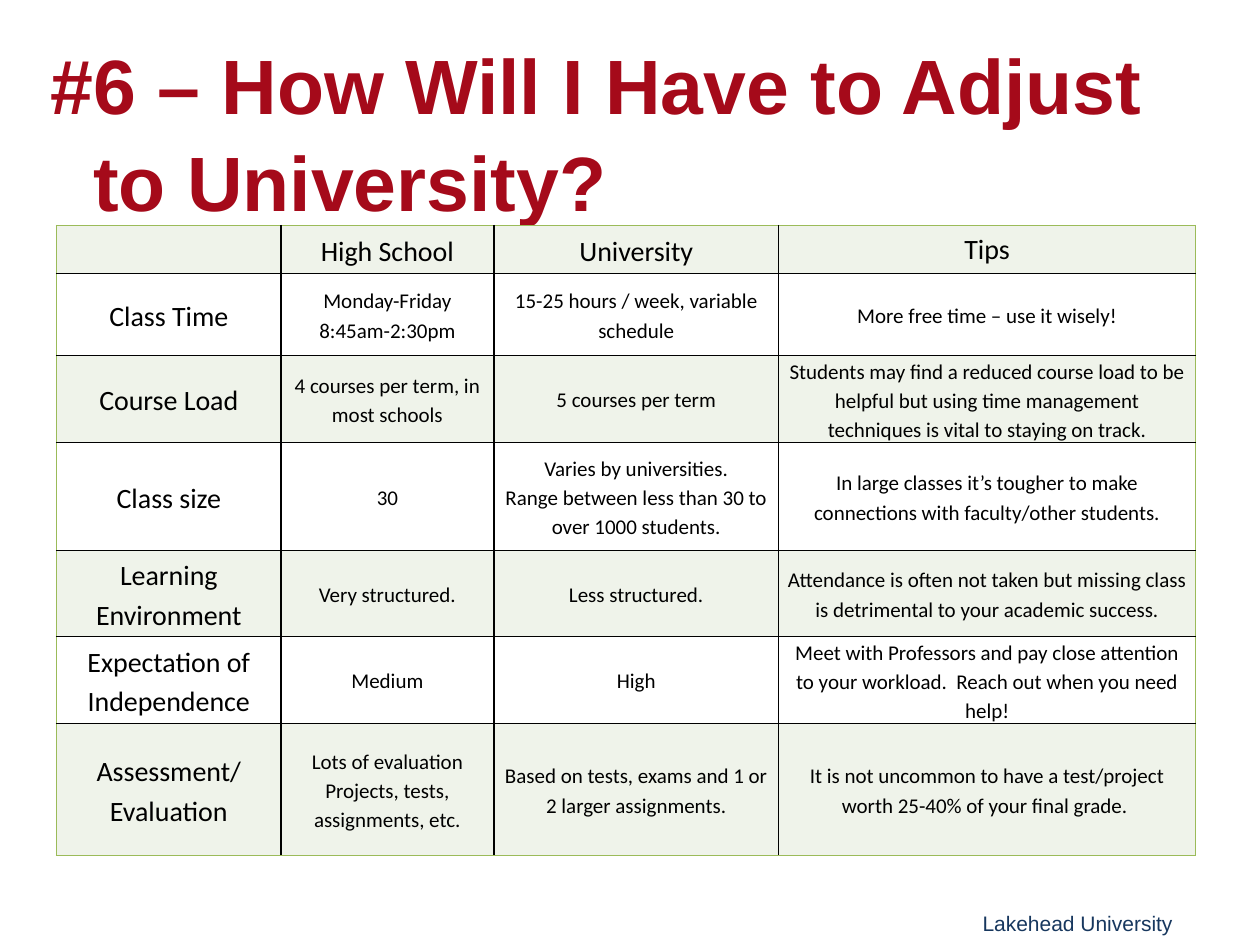
from dataclasses import dataclass
from lxml import etree
from pptx import Presentation, util as u
from pptx.dml import color
from pptx.enum import text
from pptx.oxml import ns

TITLE = "#6 – How Will I Have to Adjust\nto University?"
FOOTER = "Lakehead University"
HEADER = ["", "High School", "University", "Tips"]
ROWS = [
    ["Class Time", "Monday-Friday\n8:45am-2:30pm",
     "15-25 hours / week, variable schedule", "More free time – use it wisely!"],
    ["Course Load", "4 courses per term, in most schools", "5 courses per term",
     "Students may find a reduced course load to be helpful but using time "
     "management techniques is vital to staying on track."],
    ["Class size", "30",
     "Varies by universities.\nRange between less than 30 to over 1000 students.",
     "In large classes it’s tougher to make connections with faculty/other students."],
    ["Learning Environment", "Very structured.", "Less structured.",
     "Attendance is often not taken but missing class is detrimental to your "
     "academic success."],
    ["Expectation of Independence", "Medium", "High",
     "Meet with Professors and pay close attention to your workload.  Reach out "
     "when you need help!"],
    ["Assessment/\nEvaluation", "Lots of evaluation\nProjects, tests, assignments, etc.",
     "Based on tests, exams and 1 or 2 larger assignments.",
     "It is not uncommon to have a test/project worth 25-40% of your final grade. "],
]
COLUMN_WIDTHS = [1.78, 1.69, 2.26, 3.31]
ROW_HEIGHTS = [0.38, 0.65, 0.69, 0.86, 0.68, 0.69, 1.05]


@dataclass(frozen=True)
class Theme:
    red: str = "A50A1A"
    navy: str = "17375E"
    ink: str = "000000"
    frame: str = "9BBB59"
    band: str = "EFF3EA"
    paper: str = "FFFFFF"
    heading_font: str = "Arial"
    table_font: str = "Calibri"
    title_size: int = 44
    label_size: int = 16
    body_size: int = 12


theme = Theme()


def write(frame, content, size, ink, font, bold=False, align=text.PP_ALIGN.LEFT, spacing=1.0):
    frame.word_wrap = True
    paragraph = frame.paragraphs[0]
    paragraph.text = content
    paragraph.alignment = align
    paragraph.line_spacing = spacing
    for run in paragraph.runs:
        run.font.size = u.Pt(size)
        run.font.name = font
        run.font.bold = bold
        run.font.color.rgb = color.RGBColor.from_string(ink)
    return paragraph


def place(shape, left, top, width, height):
    shape.left, shape.top = u.Inches(left), u.Inches(top)
    shape.width, shape.height = u.Inches(width), u.Inches(height)


def draw_border(cell, side, ink):
    line = etree.SubElement(cell._tc.get_or_add_tcPr(), ns.qn(f"a:ln{side}"), w=str(u.Pt(1)))
    fill = etree.SubElement(line, ns.qn("a:solidFill"))
    etree.SubElement(fill, ns.qn("a:srgbClr"), val=ink)


def add_comparison(slide, left, top):
    grid = [HEADER] + ROWS
    last_row, last_column = len(grid) - 1, len(HEADER) - 1
    table = slide.shapes.add_table(
        len(grid), len(HEADER), u.Inches(left), u.Inches(top),
        u.Inches(sum(COLUMN_WIDTHS)), u.Inches(sum(ROW_HEIGHTS))).table
    table.first_row = table.horz_banding = False
    for column, width in zip(table.columns, COLUMN_WIDTHS):
        column.width = u.Inches(width)
    for r, (row, height) in enumerate(zip(grid, ROW_HEIGHTS)):
        table.rows[r].height = u.Inches(height)
        for c, content in enumerate(row):
            cell = table.cell(r, c)
            outer = {"L": c == 0, "R": c == last_column, "T": r == 0, "B": r == last_row}
            for side, is_outer in outer.items():
                draw_border(cell, side, theme.frame if is_outer else theme.ink)
            cell.fill.solid()
            cell.fill.fore_color.rgb = color.RGBColor.from_string(
                theme.paper if r % 2 else theme.band)
            cell.vertical_anchor = text.MSO_ANCHOR.MIDDLE
            cell.margin_left = cell.margin_right = u.Inches(0.07)
            cell.margin_top = cell.margin_bottom = 0
            is_label = r == 0 or c == 0
            write(cell.text_frame, content,
                  theme.label_size if is_label else theme.body_size,
                  theme.ink, theme.table_font, align=text.PP_ALIGN.CENTER,
                  spacing=1.0 if content == "Tips" else 1.15)


def main():
    presentation = Presentation()
    presentation.slide_width, presentation.slide_height = u.Inches(10), u.Inches(7.5)
    slide = presentation.slides.add_slide(presentation.slide_layouts[5])

    footer = slide.shapes.add_textbox(*map(u.Inches, (7.7, 7.18, 2.3, 0.3)))
    write(footer.text_frame, FOOTER, theme.body_size, theme.navy, theme.heading_font)

    title = slide.shapes.title
    place(title, 0.3, 0.21, 9.55, 1.25)
    title.text_frame.auto_size = text.MSO_AUTO_SIZE.NONE
    title.text_frame.vertical_anchor = text.MSO_ANCHOR.TOP
    heading = write(title.text_frame, TITLE, theme.title_size, theme.red,
                    theme.heading_font, bold=True, spacing=1.05)
    hanging = u.Inches(0.34)
    properties = heading._p.get_or_add_pPr()
    properties.set("marL", str(hanging))
    properties.set("indent", str(-hanging))

    add_comparison(slide, 0.45, 1.79)
    presentation.save("out.pptx")


if __name__ == "__main__":
    main()
